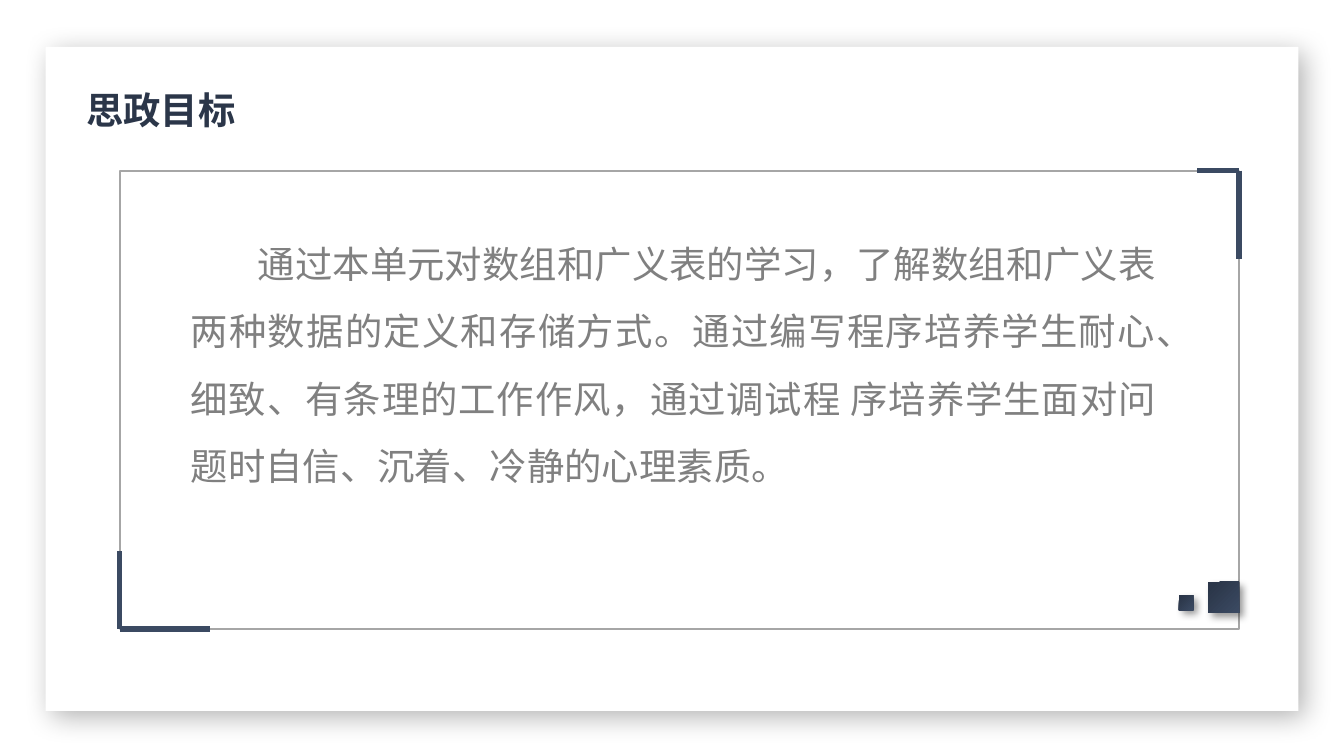
from dataclasses import dataclass

from lxml import etree
from pptx import Presentation
from pptx.dml.color import RGBColor
from pptx.enum import shapes, text
from pptx.oxml.ns import qn
from pptx.util import Inches, Pt


@dataclass(frozen=True)
class Theme:
    font: str = "Noto Sans CJK SC"
    size: Pt = Pt(20)
    white: RGBColor = RGBColor.from_string("FFFFFF")
    dark: RGBColor = RGBColor.from_string("2B3649")
    accent: RGBColor = RGBColor.from_string("3B4A62")
    frame: RGBColor = RGBColor.from_string("A6A6A6")
    body: RGBColor = RGBColor.from_string("808080")


theme = Theme()


def set_font(p, color, bold):
    p.font.size, p.font.bold, p.font.name = theme.size, bold, theme.font
    p.font.color.rgb = color
    latin = p.font._element.find(qn("a:latin"))
    ea = etree.Element(qn("a:ea"), typeface=theme.font)
    latin.addnext(ea)


def add_shadow(sp, alpha, blur, dist):
    sp.shadow.inherit = False
    effects = sp._element.spPr.find(qn("a:effectLst"))
    outer = etree.SubElement(
        effects, qn("a:outerShdw"), blurRad=str(Pt(blur)), dist=str(Pt(dist)),
        dir=str(45 * 60000), algn="tl", rotWithShape="0")
    color = etree.SubElement(outer, qn("a:srgbClr"), val="000000")
    etree.SubElement(color, qn("a:alpha"), val=str(alpha * 1000))


# Widescreen slide, 16:9
prs = Presentation()
prs.slide_width = Inches(10)
prs.slide_height = prs.slide_width * 9 // 16
s = prs.slides.add_slide(prs.slide_layouts[5])
title = s.shapes.title

# White card
sp = s.shapes.add_shape(shapes.MSO_SHAPE.RECTANGLE, Inches(0.34), Inches(0.35),
                        Inches(9.32), Inches(4.94))
sp.fill.solid()
sp.fill.fore_color.rgb = theme.white
sp.line.fill.background()
add_shadow(sp, 30, 15, 5)

# Title, brought in front of the card
s.shapes._spTree.append(title._element)
title.left, title.top = Inches(0.64), Inches(0.61)
title.width, title.height = Inches(1.12), Inches(0.4)
tf = title.text_frame
tf.margin_left = tf.margin_top = tf.margin_right = 0
tf.margin_bottom = Inches(0.05)
tf.vertical_anchor = text.MSO_ANCHOR.TOP
tf.word_wrap = False
tf.auto_size = text.MSO_AUTO_SIZE.SHAPE_TO_FIT_TEXT
p = tf.paragraphs[0]
p.text = "思政目标"
p.alignment = text.PP_ALIGN.LEFT
p.line_spacing = Pt(27)
p.space_before = Pt(0)
set_font(p, theme.dark, True)

# Body text
tb = s.shapes.add_textbox(Inches(1.32), Inches(1.58), Inches(7.38), Inches(2.12))
tf = tb.text_frame
tf.word_wrap = True
tf.auto_size = text.MSO_AUTO_SIZE.SHAPE_TO_FIT_TEXT
p = tf.paragraphs[0]
p.text = ("通过本单元对数组和广义表的学习，了解数组和广义表两种数据的定义和存储方式。"
          "通过编写程序培养学生耐心、细致、有条理的工作作风，通过调试程 序培养学生"
          "面对问题时自信、沉着、冷静的心理素质。")
p.alignment = text.PP_ALIGN.JUSTIFY
p.line_spacing = 1.5
p._p.get_or_add_pPr().set("indent", str(Inches(0.5)))
set_font(p, theme.body, False)

# Frame with two accented corners
left, top, right, bottom = 0.89, 1.27, 9.22, 4.68
group = s.shapes.add_group_shape()
sp = group.shapes.add_shape(shapes.MSO_SHAPE.RECTANGLE, Inches(left), Inches(top),
                            Inches(right - left), Inches(bottom - top))
sp.shadow.inherit = False
sp.fill.background()
sp.line.color.rgb = theme.frame
sp.line.width = Pt(1)
for x, y, dx, dy in [(left, bottom, 0.67, 0), (left, bottom, 0, -0.58),
                     (right, top, 0, 0.66), (right, top, -0.31, 0)]:
    line = group.shapes.add_connector(shapes.MSO_CONNECTOR.STRAIGHT, Inches(x), Inches(y),
                                      Inches(x + dx), Inches(y + dy))
    line.line.color.rgb = theme.accent
    line.line.width = Pt(3)
    etree.SubElement(line._element.spPr, qn("a:effectLst"))

# Small gradient squares
for x, y, side in [(8.99, 4.33, 0.23), (8.77, 4.43, 0.11)]:
    sp = s.shapes.add_shape(shapes.MSO_SHAPE.RECTANGLE, Inches(x), Inches(y),
                            Inches(side), Inches(side))
    sp.fill.gradient()
    sp.fill.gradient_angle = 315  # counter-clockwise
    for stop, position, color in zip(sp.fill.gradient_stops, (0.11, 1),
                                     (theme.dark, theme.accent)):
        stop.position = position
        stop.color.rgb = color
    sp.line.fill.background()
    add_shadow(sp, 40, 4, 3)

prs.save("out.pptx")
